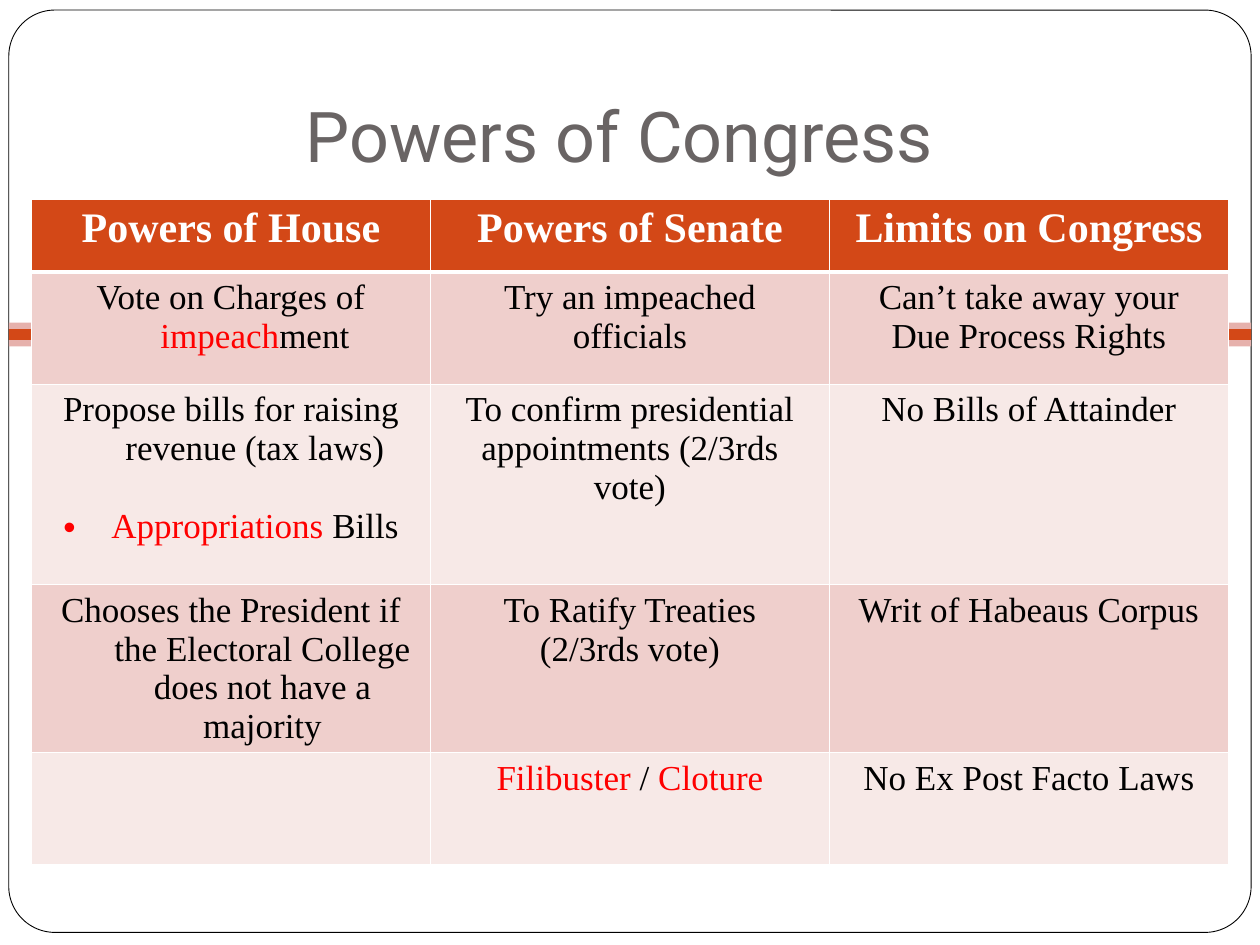
import pptx
import pptx.dml.color
import pptx.enum.shapes
import pptx.enum.text
import pptx.oxml
import pptx.oxml.ns
import pptx.util

RGBColor = pptx.dml.color.RGBColor
Inches = pptx.util.Inches
Pt = pptx.util.Pt

WHITE = RGBColor(0xFF, 0xFF, 0xFF)
BLACK = RGBColor(0x00, 0x00, 0x00)
RED = RGBColor(0xFF, 0x00, 0x00)
GREY = RGBColor(0x69, 0x64, 0x64)
ORANGE = RGBColor(0xD3, 0x48, 0x17)
PINK = RGBColor(0xE6, 0xB1, 0xAC)
BAND_DARK = RGBColor(0xEF, 0xCF, 0xCC)
BAND_LIGHT = RGBColor(0xF7, 0xE9, 0xE7)

TITLE = "Powers of Congress"
HEADERS = ["Powers of House", "Powers of Senate", "Limits on Congress"]

# A cell is a list of paragraphs, a paragraph a list of (text, colour) runs
BODY = [
    [
        [[("Vote on Charges of ", BLACK), ("impeach", RED), ("ment", BLACK)]],
        [[("Try an impeached officials", BLACK)]],
        [[("Can’t take away your", BLACK)], [("Due Process Rights", BLACK)]],
    ],
    [
        [[("Propose bills for raising revenue (tax laws)", BLACK)],
         [("Appropriations", RED), (" Bills", BLACK)]],
        [[("To confirm presidential appointments (2/3rds vote)", BLACK)]],
        [[("No Bills of Attainder", BLACK)]],
    ],
    [
        [[("Chooses the President if the Electoral College does not have a majority", BLACK)]],
        [[("To Ratify Treaties", BLACK)], [("(2/3rds vote)", BLACK)]],
        [[("Writ of Habeaus Corpus", BLACK)]],
    ],
    [
        [],
        [[("Filibuster", RED), (" / ", BLACK), ("Cloture", RED)]],
        [[("No Ex Post Facto Laws", BLACK)]],
    ],
]
HANGING = {1: 0.38, 2: 0.38, 3: 0.5}  # first column, by table row
BULLETED = (2, 0, 1)                  # row, column, paragraph
BULLET_GAP = 22.5

SLIDE_WIDTH, SLIDE_HEIGHT = 10, 7.5
TABLE_LEFT, TABLE_TOP = 0.25, 1.58
ROW_HEIGHTS = [0.58, 0.89, 1.59, 1.19, 0.89]
FRAME_LEFT, FRAME_WIDTH = 0.07, 9.86
STRIPES = [(2.6, 0.1, ORANGE), (2.56, 0.05, PINK), (2.7, 0.05, PINK)]


def add_panel(slide, kind, top, height, color):
    shape = slide.shapes.add_shape(
        kind, Inches(FRAME_LEFT), Inches(top), Inches(FRAME_WIDTH), Inches(height))
    shape.shadow.inherit = False
    shape.fill.solid()
    shape.fill.fore_color.rgb = color
    shape.line.fill.background()
    return shape


def add_run(paragraph, text, font_name, size, color, bold=False):
    run = paragraph.add_run()
    run.text = text
    run.font.name = font_name
    run.font.size = Pt(size)
    run.font.bold = bold
    run.font.color.rgb = color


def set_hanging(paragraph, indent):
    properties = paragraph._p.get_or_add_pPr()
    properties.set("marL", str(Inches(indent)))
    properties.set("indent", str(-Inches(indent)))


def add_bullet(paragraph):
    properties = paragraph._p.get_or_add_pPr()
    namespace = pptx.oxml.ns.nsdecls("a")
    for element in ('buFont {} typeface="Arial"', 'buChar {} char="•"'):
        properties.append(pptx.oxml.parse_xml(f"<a:{element.format(namespace)}/>"))


def set_borders(cell, widths):
    properties = cell._tc.get_or_add_tcPr()
    for position, (side, width) in enumerate(widths.items()):
        properties.insert(position, pptx.oxml.parse_xml(
            f'<a:ln{side} {pptx.oxml.ns.nsdecls("a")} w="{Pt(width)}">'
            f'<a:solidFill><a:srgbClr val="{WHITE}"/></a:solidFill></a:ln{side}>'))


def fill_cell(cell, row, column, paragraphs):
    frame = cell.text_frame
    for index, runs in enumerate(paragraphs):
        paragraph = frame.paragraphs[0] if index == 0 else frame.add_paragraph()
        paragraph.alignment = pptx.enum.text.PP_ALIGN.CENTER
        if column == 0 and row in HANGING:
            set_hanging(paragraph, HANGING[row])
        if (row, column, index) == BULLETED:
            add_bullet(paragraph)
            paragraph.space_before = Pt(BULLET_GAP)
        for text, color in runs:
            add_run(paragraph, text, "Times New Roman",
                    24 if row == 0 else 20, color, bold=row == 0)


def main():
    presentation = pptx.Presentation()
    presentation.slide_width = Inches(SLIDE_WIDTH)
    presentation.slide_height = Inches(SLIDE_HEIGHT)
    slide = presentation.slides.add_slide(presentation.slide_layouts[5])
    title = slide.shapes.title

    # Rounded frame and the stripes across it
    shapes = pptx.enum.shapes.MSO_SHAPE
    frame = add_panel(slide, shapes.ROUNDED_RECTANGLE, 0.08, 7.32, WHITE)
    frame.adjustments[0] = 0.05
    frame.line.color.rgb = BLACK
    frame.line.width = Pt(0.5)
    for top, height, color in STRIPES:
        add_panel(slide, shapes.RECTANGLE, top, height, color)

    # Title, brought in front of the frame
    slide.shapes._spTree.append(title._element)
    title.left, title.top = Inches(1), Inches(0.3)
    title.width, title.height = Inches(7.83), Inches(1.2)
    text_frame = title.text_frame
    text_frame.vertical_anchor = pptx.enum.text.MSO_ANCHOR.BOTTOM
    text_frame.margin_bottom = Inches(0.1)
    text_frame.paragraphs[0].alignment = pptx.enum.text.PP_ALIGN.CENTER
    add_run(text_frame.paragraphs[0], TITLE, "Roboto", 40, GREY)

    # Table with alternating bands
    rows = [[[[(header, WHITE)]] for header in HEADERS]] + BODY
    table = slide.shapes.add_table(
        len(rows), len(HEADERS), Inches(TABLE_LEFT), Inches(TABLE_TOP),
        Inches(SLIDE_WIDTH - 2 * TABLE_LEFT), Inches(sum(ROW_HEIGHTS))).table
    table.first_row = table.horz_banding = False
    for row, cells in enumerate(rows):
        table.rows[row].height = Inches(ROW_HEIGHTS[row])
        band = ORANGE if row == 0 else BAND_DARK if row % 2 else BAND_LIGHT
        borders = {"L": 1, "R": 1, "T": 3 if row == 1 else 1, "B": 3 if row == 0 else 1}
        for column, paragraphs in enumerate(cells):
            cell = table.cell(row, column)
            cell.fill.solid()
            cell.fill.fore_color.rgb = band
            set_borders(cell, borders)
            fill_cell(cell, row, column, paragraphs)

    presentation.save("out.pptx")


if __name__ == "__main__":
    main()
